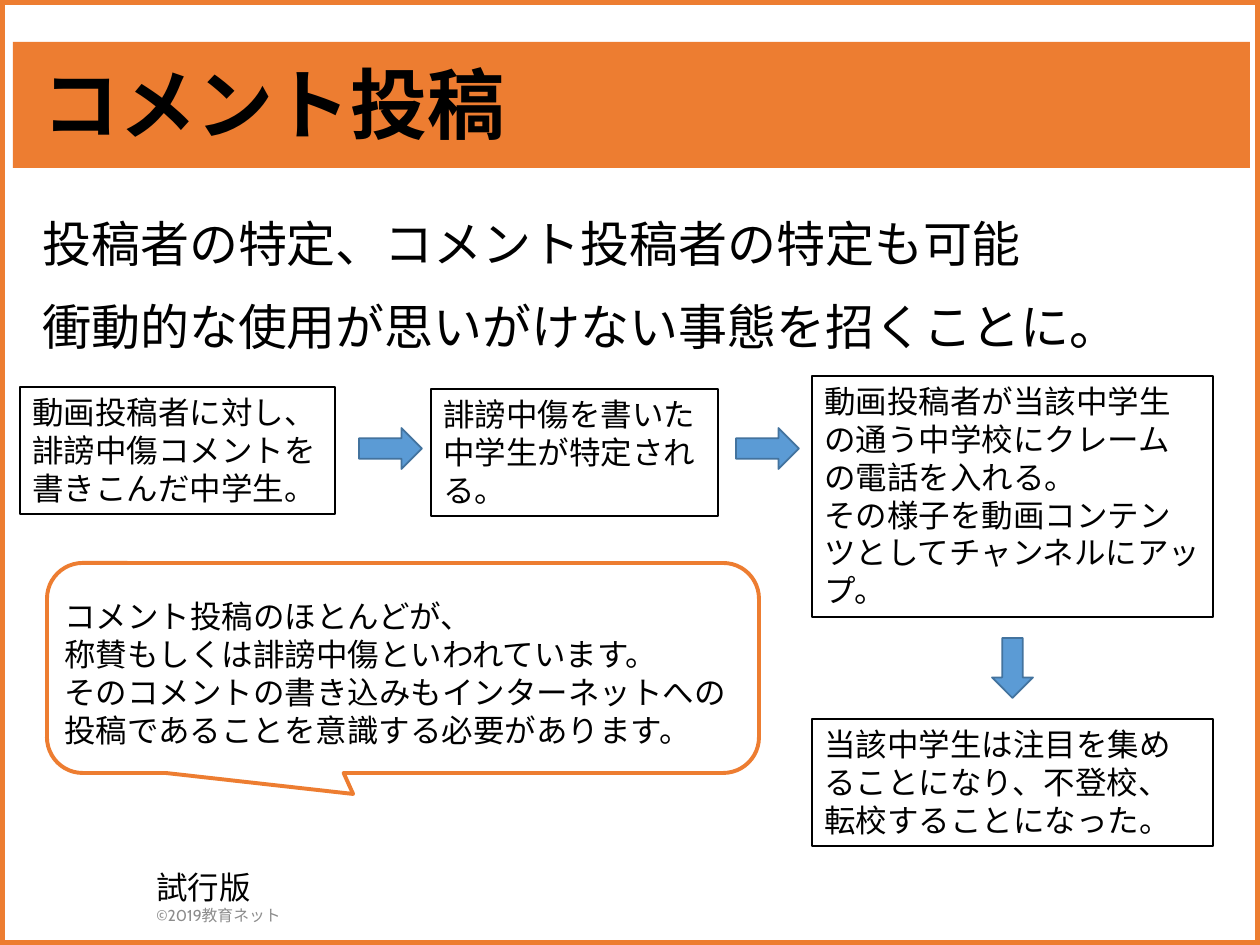
from lxml import etree
from pptx import Presentation
from pptx import util as u
from pptx.dml.color import RGBColor
from pptx.enum import shapes, text
from pptx.oxml.ns import qn

ORANGE, BLUE, NAVY = "ED7D31", "5B9BD5", "43739E"
BLACK, WHITE, GRAY = "000000", "FFFFFF", "8C8C8C"
JP, LATIN = "Noto Sans CJK JP", "Cabin"
SHAPE = shapes.MSO_SHAPE


def px(n):
    return u.Emu(round(n * 914400 / 126))


def rgb(value):
    return RGBColor.from_string(value)


class Deck:
    """Draws styled elements on the current slide."""

    def __init__(self, prs):
        self.s = prs.slides.add_slide(prs.slide_layouts[5])

    def fill_text(self, tf, lines, size, color=BLACK, font=JP, bold=False, gap=0):
        tf.word_wrap = True
        tf.text = "\n".join(lines)
        for i, p in enumerate(tf.paragraphs):
            p.alignment = text.PP_ALIGN.LEFT
            if i and gap:
                p.space_before = u.Pt(gap)
            for r in p.runs:
                r.font.size, r.font.bold, r.font.name = u.Pt(size), bold, font
                r.font.color.rgb = rgb(color)
                ea = etree.SubElement(r.font._element, qn("a:ea"))
                ea.set("typeface", JP)

    def shape(self, kind, box, fill=None, line=None, width=1):
        sp = self.s.shapes.add_shape(kind, *map(px, box))
        sp.shadow.inherit = False
        if fill:
            sp.fill.solid()
            sp.fill.fore_color.rgb = rgb(fill)
        else:
            sp.fill.background()
        if line:
            sp.line.color.rgb = rgb(line)
            sp.line.width = u.Pt(width)
        else:
            sp.line.fill.background()
        return sp

    def title(self, box, line):
        sp = self.s.shapes.title
        self.s.shapes.element.append(sp.element)
        sp.left, sp.top, sp.width, sp.height = map(px, box)
        sp.text_frame.vertical_anchor = text.MSO_ANCHOR.MIDDLE
        self.fill_text(sp.text_frame, [line], 44, bold=True)
        sp.text_frame.paragraphs[0].line_spacing = 0.9

    def label(self, box, lines, size=18, **style):
        sp = self.s.shapes.add_textbox(*map(px, box))
        self.fill_text(sp.text_frame, lines, size, **style)
        return sp

    def step(self, box, lines):
        sp = self.shape(SHAPE.RECTANGLE, box, WHITE, BLACK)
        sp.text_frame.vertical_anchor = text.MSO_ANCHOR.TOP
        self.fill_text(sp.text_frame, lines, 18)

    def arrow(self, kind, box):
        self.shape(kind, box, BLUE, NAVY)

    def callout(self, box, adjustments):
        sp = self.shape(SHAPE.ROUNDED_RECTANGULAR_CALLOUT, box, None, ORANGE, 2.25)
        for i, value in enumerate(adjustments):
            sp.adjustments[i] = value


def main():
    prs = Presentation()
    prs.slide_width, prs.slide_height = px(1260), px(945)
    deck = Deck(prs)

    deck.shape(SHAPE.RECTANGLE, (0, 0, 1260, 945), None, ORANGE, 6)
    footer = deck.label((144, 862, 364, 72), ["試行版", "©2019教育ネット"], font=LATIN)
    for r in footer.text_frame.paragraphs[1].runs:
        r.font.size = u.Pt(9)
        r.font.color.rgb = rgb(GRAY)

    deck.shape(SHAPE.RECTANGLE, (13, 42, 1237, 126), ORANGE)
    deck.title((30, 55, 1096, 108), "コメント投稿")
    deck.label((30, 207, 1169, 158), [
        "投稿者の特定、コメント投稿者の特定も可能",
        "衝動的な使用が思いがけない事態を招くことに。"], 28, gap=14)

    steps = [
        ((20, 387, 315, 127), ["動画投稿者に対し、", "誹謗中傷コメントを書きこんだ中学生。"]),
        ((431, 389, 287, 127), ["誹謗中傷を書いた中学生が特定される。"]),
        ((812, 376, 401, 241), ["動画投稿者が当該中学生の通う中学校にクレームの電話を入れる。",
                                "その様子を動画コンテンツとしてチャンネルにアップ。"]),
        ((812, 719, 401, 127), ["当該中学生は注目を集めることになり、不登校、転校することになった。"]),
    ]
    for box, lines in steps:
        deck.step(box, lines)
    for left in (359, 736):
        deck.arrow(SHAPE.RIGHT_ARROW, (left, 428, 63, 41))
    deck.arrow(SHAPE.DOWN_ARROW, (992, 638, 41, 60))

    deck.callout((47, 563, 712, 210), (-0.07, 0.6, 0.17))
    deck.label((52, 591, 707, 204), [
        "コメント投稿のほとんどが、",
        "称賛もしくは誹謗中傷といわれています。",
        "そのコメントの書き込みもインターネットへの投稿であることを意識する必要があります。"])

    prs.save("out.pptx")


if __name__ == "__main__":
    main()
